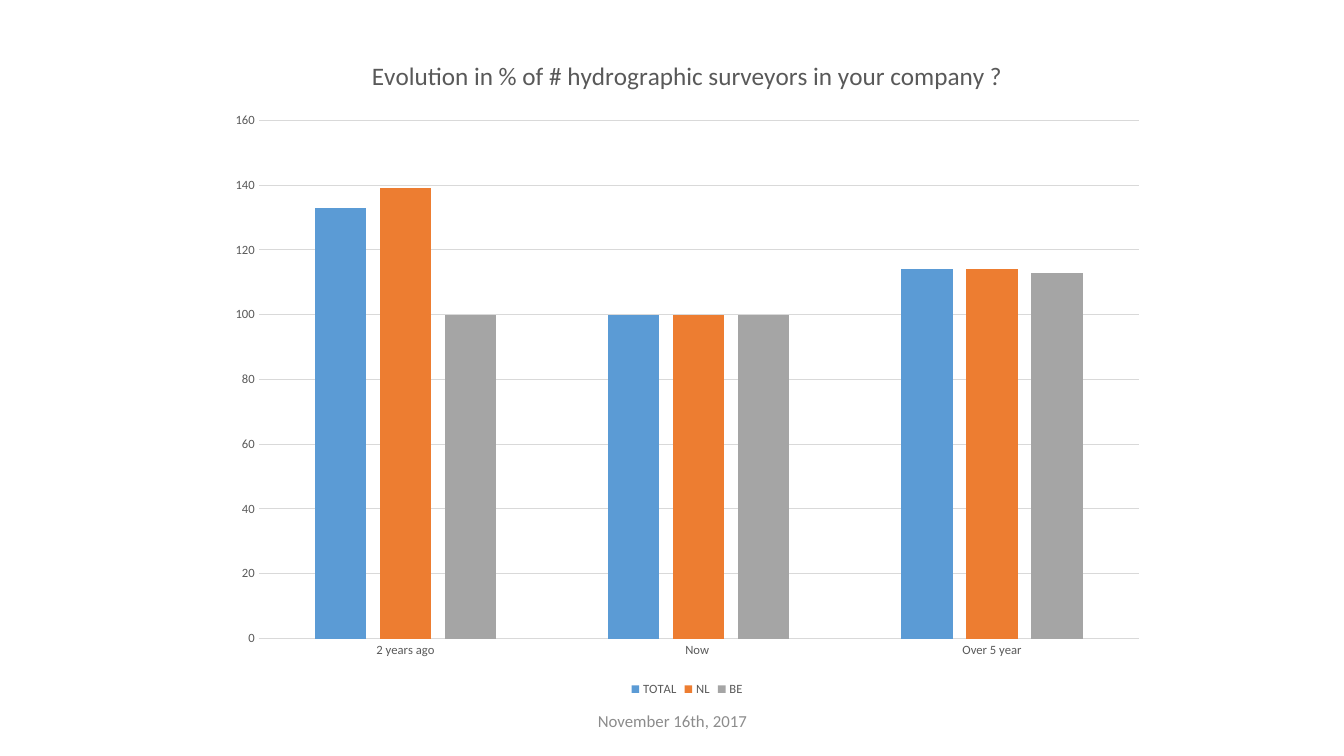
from pptx import Presentation
from pptx import util as u
from pptx.chart.data import CategoryChartData
from pptx.dml.color import RGBColor
from pptx.enum import chart as charts, text

FONT = "Calibri"
COLORS = {
    "TOTAL": "5B9BD5",
    "NL": "ED7D31",
    "BE": "A5A5A5",
    "label": "595959",
    "grid": "D9D9D9",
    "date": "8C8C8C",
}
PERIODS = ["2 years ago", "Now ", "Over 5 year"]
SURVEYORS = {
    "TOTAL": (133, 100, 114),
    "NL": (139, 100, 114),
    "BE": (100, 100, 113),
}


def color(name):
    return RGBColor.from_string(COLORS[name])


def style_font(font, size, color_name):
    font.name = FONT
    font.size = u.Pt(size)
    font.bold = False
    font.color.rgb = color(color_name)


def style_line(line):
    line.color.rgb = color("grid")
    line.width = u.Pt(0.75)


def style_axis(axis):
    axis.major_tick_mark = charts.XL_TICK_MARK.NONE
    axis.minor_tick_mark = charts.XL_TICK_MARK.NONE
    style_font(axis.tick_labels.font, 9, "label")


def add_title(chart, title):
    chart.has_title = True
    frame = chart.chart_title.text_frame
    frame.text = title
    style_font(frame.paragraphs[0].runs[0].font, 18, "label")
    chart.chart_title.include_in_layout = False


def add_legend(chart):
    chart.has_legend = True
    chart.legend.position = charts.XL_LEGEND_POSITION.BOTTOM
    chart.legend.include_in_layout = False
    style_font(chart.legend.font, 9, "label")


def add_column_chart(slide, title, left, top, width, height):
    data = CategoryChartData(number_format="0")
    data.categories = PERIODS
    for name, values in SURVEYORS.items():
        data.add_series(name, values)
    chart = slide.shapes.add_chart(
        charts.XL_CHART_TYPE.COLUMN_CLUSTERED,
        u.Inches(left), u.Inches(top), u.Inches(width), u.Inches(height), data,
    ).chart
    chart.font.name = FONT
    chart.font.size = u.Pt(10)
    add_title(chart, title)
    add_legend(chart)

    style_axis(chart.category_axis)
    style_line(chart.category_axis.format.line)
    value_axis = chart.value_axis
    style_axis(value_axis)
    value_axis.format.line.fill.background()
    value_axis.minimum_scale = 0
    value_axis.maximum_scale = 160
    value_axis.major_unit = 20
    value_axis.has_major_gridlines = True
    style_line(value_axis.major_gridlines.format.line)

    plot = chart.plots[0]
    plot.vary_by_categories = False
    plot.gap_width = 219
    plot.overlap = -27
    for series in plot.series:
        series.format.fill.solid()
        series.format.fill.fore_color.rgb = color(series.name)
        series.invert_if_negative = False


def add_date(slide, date, left, top, width, height):
    box = slide.shapes.add_textbox(
        u.Inches(left), u.Inches(top), u.Inches(width), u.Inches(height))
    frame = box.text_frame
    frame.word_wrap = True
    frame.vertical_anchor = text.MSO_ANCHOR.MIDDLE
    frame.text = date
    para = frame.paragraphs[0]
    para.alignment = text.PP_ALIGN.CENTER
    style_font(para.runs[0].font, 12, "date")


def main():
    deck = Presentation()
    deck.slide_width = u.Inches(13.33)
    deck.slide_height = u.Inches(7.5)
    slide = deck.slides.add_slide(deck.slide_layouts[6])
    add_date(slide, "November 16th, 2017", 4.42, 6.95, 4.5, 0.4)
    add_column_chart(
        slide, "Evolution in % of # hydrographic surveyors in your company ?",
        2.15, 0.35, 9.33, 6.6)
    deck.save("out.pptx")


if __name__ == "__main__":
    main()
